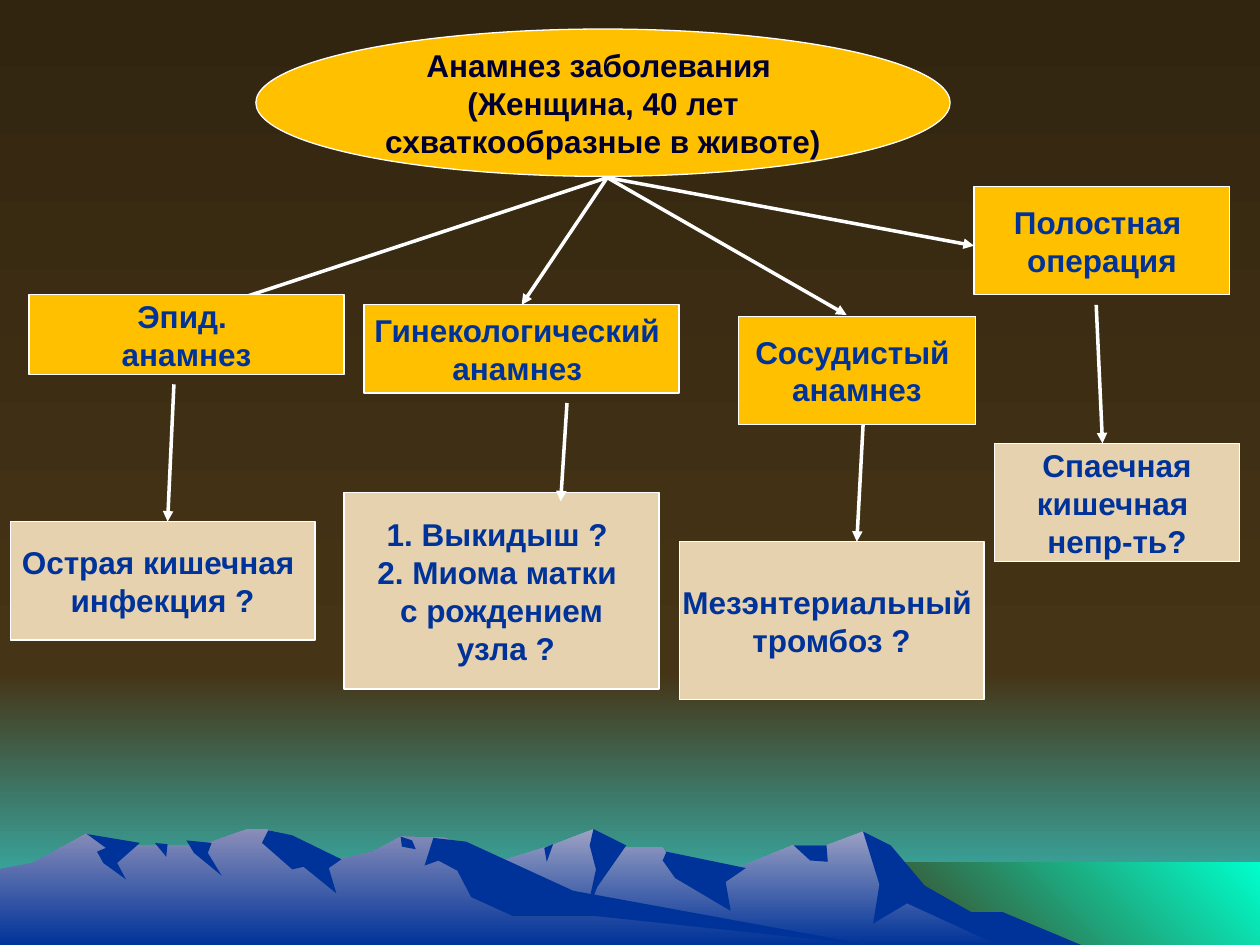
from lxml.etree import SubElement
from pptx import Presentation
from pptx.dml.color import RGBColor
from pptx.enum.shapes import MSO_CONNECTOR, MSO_SHAPE
from pptx.enum.text import MSO_ANCHOR, PP_ALIGN
from pptx.oxml.ns import qn
from pptx.util import Pt

WHITE, NAVY, INK = "FFFFFF", "003399", "000030"
AMBER, SAND = "FFC000", "E6D2AF"
BROWN = "463416"
DOWN, UP_RIGHT = 270, 45
RIDGE_UNIT = Pt(0.72)

BACKDROP = [
    ((0, 384, 720, 156), (BROWN, "33CCCC", DOWN)),
    ((0, 0, 720, 384), ("322510", BROWN, DOWN)),
    ((492, 493, 228, 47), (BROWN, "00FFCC", UP_RIGHT)),
]

FAR_SLOPE, NEAR_SLOPE = ("9EA2C3", NAVY, DOWN), ("8A8EB9", NAVY, DOWN)
RIDGES = [
    (FAR_SLOPE, [
        (821, 750), (764, 723), (723, 698), (685, 660), (656, 671), (629, 671),
        (566, 697), (536, 690), (526, 673), (486, 673), (471, 658), (438, 671),
        (399, 683), (327, 709), (258, 750)]),
    (NAVY, [
        (796, 724), (771, 724), (734, 703), (707, 671), (685, 660), (698, 702),
        (693, 733), (720, 717), (792, 750), (858, 750)]),
    (NAVY, [
        (471, 658), (468, 671), (473, 690), (465, 727), (474, 704), (497, 671)]),
    (NAVY, [(529, 676), (526, 683), (536, 697), (580, 723), (576, 700), (592, 689)]),
    (NAVY, [(630, 671), (643, 683), (657, 684), (656, 671)]),
    (NAVY, [(432, 673), (439, 670), (434, 684)]),
    (NEAR_SLOPE, [
        (690, 750), (432, 712), (354, 665), (318, 664), (296, 676), (271, 682),
        (223, 663), (212, 658), (196, 658), (160, 671), (128, 671), (94, 671),
        (68, 662), (26, 685), (0, 690), (0, 750)]),
    (NAVY, [
        (213, 659), (208, 669), (232, 690), (241, 688), (267, 709), (261, 689),
        (271, 682), (232, 663)]),
    (NAVY, [
        (370, 668), (344, 665), (337, 687), (348, 683), (363, 691), (374, 712),
        (407, 727), (472, 727), (690, 750), (455, 707)]),
    (NAVY, [(318, 664), (327, 667), (330, 674), (319, 672)]),
    (NAVY, [(148, 667), (168, 669), (165, 677), (176, 695), (154, 677)]),
    (NAVY, [(123, 669), (133, 670), (132, 680)]),
    (NAVY, [
        (69, 662), (111, 669), (93, 685), (100, 698), (82, 685), (77, 676), (84, 673)]),
]

COMPLAINT = "Анамнез заболевания \n(Женщина, 40 лет\nсхваткообразные в животе)"
COMPLAINT_BOX = (146.2, 16.6, 396.7, 84.2)
HUB = (347, 101.5)

BRANCHES = [
    {"history": "Эпид. \nанамнез", "history_box": (16.6, 168.5, 180, 45.4),
     "diagnosis": "Острая кишечная \nинфекция ?", "diagnosis_box": (5.8, 298.1, 174.2, 67.7),
     "tip": (123.8, 175), "descent": (99.4, 95.8), "gap": 5.7, "overlap": 0},
    {"history": "Гинекологический \nанамнез ", "history_box": (208.1, 174.2, 180, 50.4),
     "diagnosis": "1. Выкидыш ? \n2. Миома матки \nс рождением\n узла ?",
     "diagnosis_box": (196.6, 281.5, 180, 112.3),
     "tip": (298.1, 174.2), "descent": (324, 320.4), "gap": 5.7, "overlap": 5},
    {"history": "Сосудистый \nанамнез", "history_box": (421.9, 180.7, 135.4, 61.9),
     "diagnosis": "Мезэнтериальный \nтромбоз ?", "diagnosis_box": (388.1, 309.6, 174.2, 90),
     "tip": (483.8, 180), "descent": (493.2, 489.6), "gap": 0, "overlap": 0},
    {"history": "Полостная \nоперация", "history_box": (556.6, 106.6, 146.2, 61.9),
     "diagnosis": "Спаечная\nкишечная \nнепр-ть?", "diagnosis_box": (568.1, 253.4, 140.4, 67.7),
     "tip": (556.6, 140.4), "descent": (626.4, 630), "gap": 5.7, "overlap": 0},
]


def rgb(value):
    return RGBColor.from_string(value)


def paint(shape, coat):
    shape.shadow.inherit = False
    shape.line.fill.background()
    if isinstance(coat, str):
        shape.fill.solid()
        shape.fill.fore_color.rgb = rgb(coat)
        return
    *stop_colors, angle = coat
    shape.fill.gradient()
    shape.fill.gradient_angle = angle
    for stop, color in zip(shape.fill.gradient_stops, stop_colors):
        stop.color.rgb = rgb(color)


def add_ridge(shapes, outline, coat):
    builder = shapes.build_freeform(*outline[0], scale=RIDGE_UNIT)
    builder.add_line_segments(outline[1:], close=True)
    paint(builder.convert_to_shape(), coat)


def add_node(shapes, kind, label, box, fill, ink):
    node = shapes.add_shape(kind, *map(Pt, box))
    paint(node, fill)
    node.line.color.rgb = rgb(WHITE)
    node.line.width = Pt(0.75)
    frame = node.text_frame
    frame.word_wrap = False
    frame.vertical_anchor = MSO_ANCHOR.MIDDLE
    frame.text = label
    for paragraph in frame.paragraphs:
        paragraph.alignment = PP_ALIGN.CENTER
        font = paragraph.font
        font.name, font.size, font.bold = "Arial", Pt(18), True
        font.color.rgb = rgb(ink)


def add_arrow(shapes, start, tip):
    arrow = shapes.add_connector(MSO_CONNECTOR.STRAIGHT, *map(Pt, (*start, *tip)))
    arrow.line.color.rgb = rgb(WHITE)
    arrow.line.width = Pt(2)
    line_xml = arrow._element.spPr.find(qn("a:ln"))
    SubElement(line_xml, qn("a:tailEnd"), type="triangle")
    SubElement(arrow._element.spPr, qn("a:effectLst"))


def add_branch(shapes, branch):
    add_arrow(shapes, HUB, branch["tip"])
    for part, fill in (("history", AMBER), ("diagnosis", SAND)):
        add_node(shapes, MSO_SHAPE.RECTANGLE, branch[part], branch[f"{part}_box"], fill, NAVY)
    _, history_top, _, history_height = branch["history_box"]
    start_x, tip_x = branch["descent"]
    start_y = history_top + history_height + branch["gap"]
    tip_y = branch["diagnosis_box"][1] + branch["overlap"]
    add_arrow(shapes, (start_x, start_y), (tip_x, tip_y))


def main():
    deck = Presentation()
    deck.slide_width, deck.slide_height = Pt(720), Pt(540)
    shapes = deck.slides.add_slide(deck.slide_layouts[6]).shapes

    for box, coat in BACKDROP:
        paint(shapes.add_shape(MSO_SHAPE.RECTANGLE, *map(Pt, box)), coat)
    for coat, outline in RIDGES:
        add_ridge(shapes, outline, coat)

    add_node(shapes, MSO_SHAPE.OVAL, COMPLAINT, COMPLAINT_BOX, AMBER, INK)
    for branch in BRANCHES:
        add_branch(shapes, branch)

    deck.save("out.pptx")


if __name__ == "__main__":
    main()
